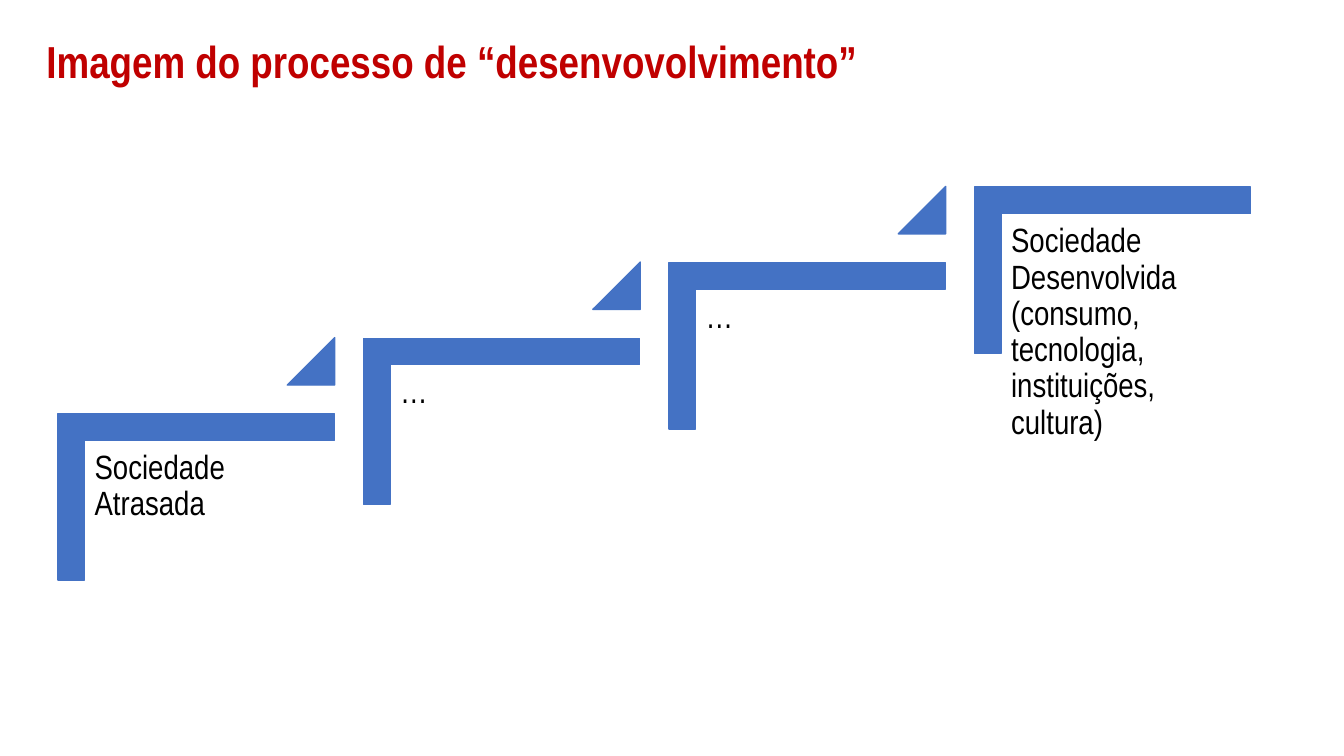
from dataclasses import dataclass

from pptx import Presentation
from pptx.dml.color import RGBColor
from pptx.enum.shapes import MSO_SHAPE
from pptx.enum.text import MSO_ANCHOR, PP_ALIGN
from pptx.util import Pt

# Content
TITLE = "Imagem do processo de “desenvovolvimento”"
STAGES = [
    "Sociedade Atrasada",
    "…",
    "…",
    "Sociedade Desenvolvida (consumo, tecnologia, instituições, cultura)",
]

# Layout in px, 100 px to the inch
PX = 9144
PAGE_SIZE = (1333, 750)
TITLE_BOX = (36, 19, 1268, 88)
STEP_RIGHT, STEP_UP = 303, 75
CORNER_BOX = (112, 356, 165, 274)
LABEL_BOX = (84, 437, 248, 217)
ARROW_BOX = (285, 335, 47, 47)
INSET = 10
CORNER_THICKNESS = 0.16

CORNER = MSO_SHAPE.CORNER
TRIANGLE = MSO_SHAPE.ISOSCELES_TRIANGLE
LEFT = PP_ALIGN.LEFT
TOP, MIDDLE = MSO_ANCHOR.TOP, MSO_ANCHOR.MIDDLE


@dataclass(frozen=True)
class Theme:
    font: str = "Arial Narrow"
    title_size: int = 32
    label_size: int = 24
    title: str = "C00000"
    label: str = "000000"
    stair: str = "4472C4"


THEME = Theme()


def emu(box):
    return [length * PX for length in box]


def on_step(box, step):
    left, top, width, height = box
    return emu((left + step * STEP_RIGHT, top - step * STEP_UP, width, height))


def write(frame, text, size, color, anchor, bold=False):
    frame.word_wrap = True
    frame.vertical_anchor = anchor
    para = frame.paragraphs[0]
    para.text = text
    para.alignment = LEFT
    para.line_spacing = 0.9
    para.font.name = THEME.font
    para.font.size = Pt(size)
    para.font.bold = bold
    para.font.color.rgb = RGBColor.from_string(color)


def add_stair_part(page, kind, box, adjustments):
    part = page.shapes.add_shape(kind, *box)
    part.shadow.inherit = False
    for index, value in enumerate(adjustments):
        part.adjustments[index] = value
    part.fill.solid()
    part.fill.fore_color.rgb = RGBColor.from_string(THEME.stair)
    part.line.color.rgb = RGBColor.from_string(THEME.stair)
    part.line.width = Pt(1)
    return part


def add_label(page, text, box):
    frame = page.shapes.add_textbox(*box).text_frame
    frame.margin_left = frame.margin_right = INSET * PX
    frame.margin_top = frame.margin_bottom = INSET * PX
    write(frame, text, THEME.label_size, THEME.label, TOP)


def main():
    deck = Presentation()
    deck.slide_width, deck.slide_height = emu(PAGE_SIZE)
    page = deck.slides.add_slide(deck.slide_layouts[5])

    # Title
    title = page.shapes.title
    title.left, title.top, title.width, title.height = emu(TITLE_BOX)
    write(title.text_frame, TITLE, THEME.title_size, THEME.title, MIDDLE, bold=True)

    # Staircase, with a triangle leading up to each next stage
    for step, stage in enumerate(STAGES):
        corner = add_stair_part(
            page, CORNER, on_step(CORNER_BOX, step), [CORNER_THICKNESS] * 2
        )
        corner.rotation = 90
        add_label(page, stage, on_step(LABEL_BOX, step))
        if step < len(STAGES) - 1:
            add_stair_part(page, TRIANGLE, on_step(ARROW_BOX, step), [1])

    deck.save("out.pptx")


if __name__ == "__main__":
    main()
